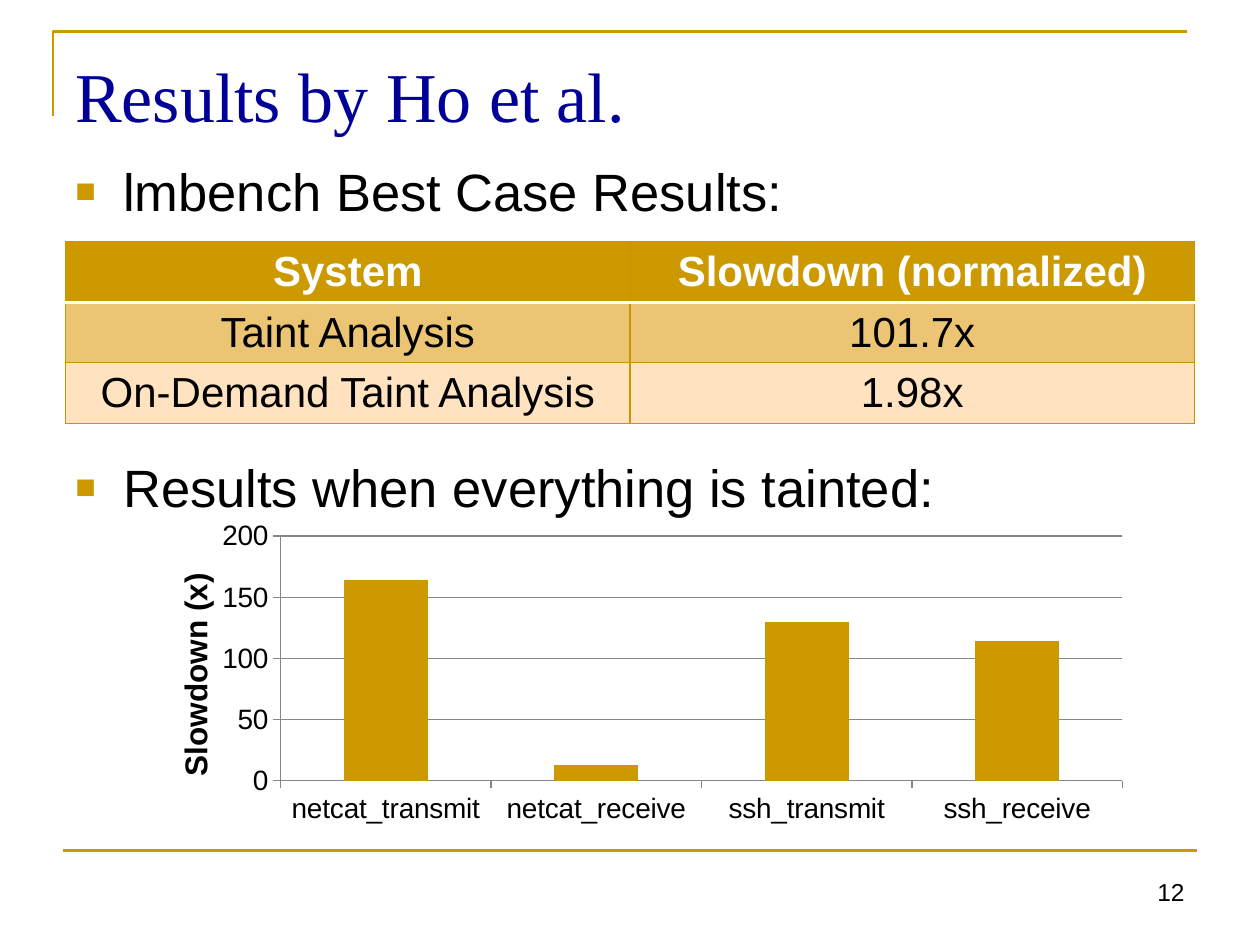
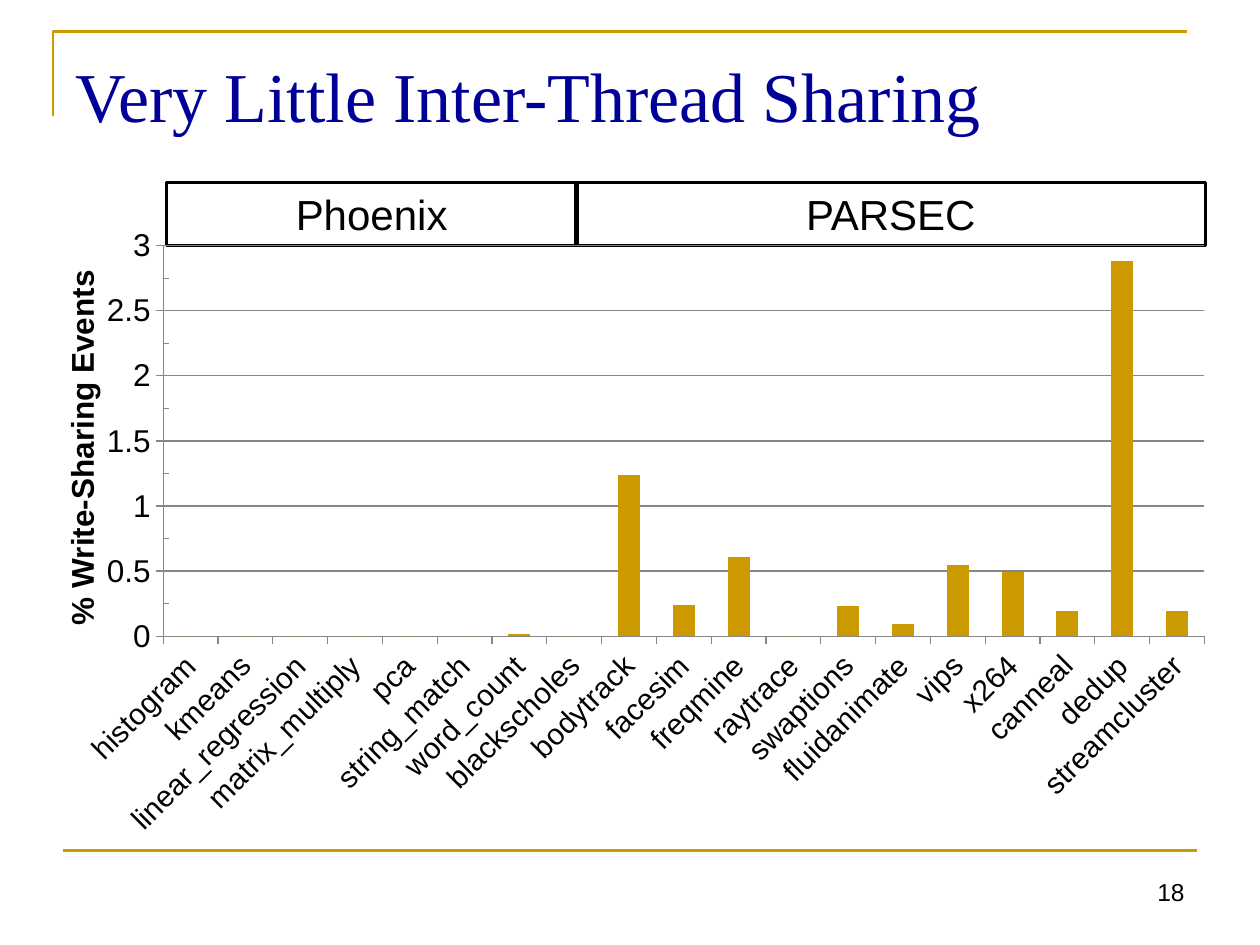
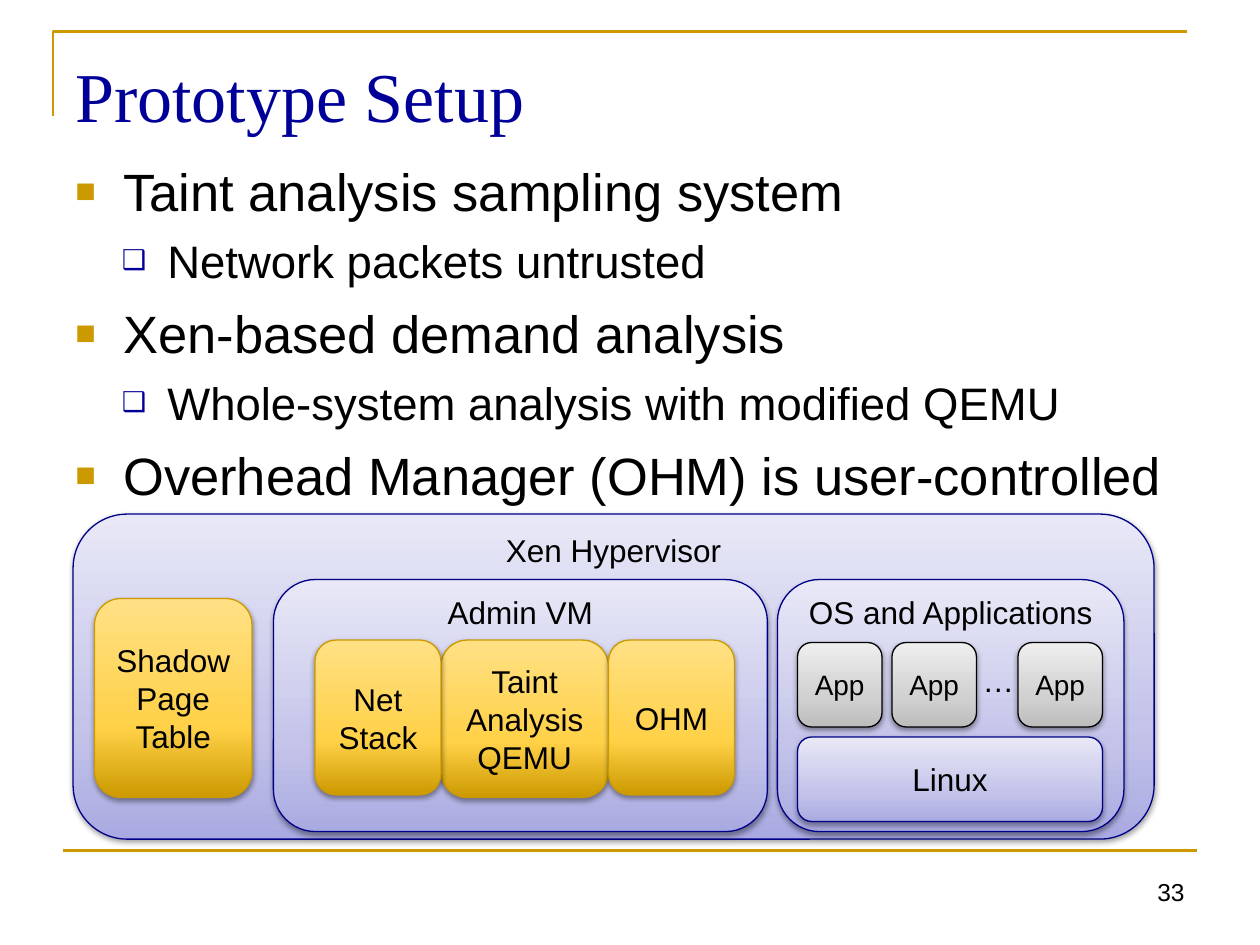
import lxml.etree
import pptx
import pptx.chart.data
import pptx.dml.color
import pptx.enum.chart
import pptx.enum.shapes
import pptx.enum.text
import pptx.oxml.ns
import pptx.util

Inches = pptx.util.Inches
Pt = pptx.util.Pt
qn = pptx.oxml.ns.qn
SHAPE = pptx.enum.shapes.MSO_SHAPE
ALIGN = pptx.enum.text.PP_ALIGN
ANCHOR = pptx.enum.text.MSO_ANCHOR
TICK = pptx.enum.chart.XL_TICK_MARK

COLORS = {
    "gold": "CC9900", "edge": "C89600", "title": "000099", "navy": "000087",
    "black": "000000", "white": "FFFFFF", "grid": "868686",
    "tan": "EBC573", "cream": "FFE2BF",
}
LOOKS = {
    "blue": ("navy", [(0, "AAAAE2"), (35, "C4C4EA"), (100, "E8E8F7")]),
    "gold": ("gold", [(0, "CC9900"), (35, "FFD147"), (100, "FFE085")]),
    "gray": ("black", [(0, "BDBDBD"), (35, "D1D1D1"), (100, "EEEEEE")]),
}
LEVELS = [
    {"size": 30, "left": 0.38, "hang": 0.38, "mark": "■", "tint": "gold", "scale": 65, "gap": 7.5},
    {"size": 26, "left": 0.73, "hang": 0.36, "mark": "❑", "tint": "title", "scale": 60, "gap": 6.5},
]

TABLE = [
    ("System", "Slowdown (normalized)"),
    ("Taint Analysis", "101.7x"),
    ("On-Demand Taint Analysis", "1.98x"),
]
ROW_FILLS = ["gold", "tan", "cream"]

TAINTED = {
    "at": (1.02, 4.08, 8.05, 2.49),
    "plot": (0.15, 0.07, 0.83, 0.78),
    "label": ("Slowdown (x)", 0.04, 0.17),
    "sizes": (16, 16),
    "top": 200, "step": 50,
    "data": {"netcat_transmit": 164, "netcat_receive": 13, "ssh_transmit": 130, "ssh_receive": 114},
}
SHARING = {
    "at": (0.25, 1.75, 9.5, 5),
    "plot": (0.11, 0.04, 0.87, 0.62),
    "label": ("% Write-Sharing Events", 0.02, 0.07),
    "sizes": (17, 18),
    "top": 3, "step": 0.5, "minor": 0.25, "turn": -45,
    "data": {
        "histogram": 0, "kmeans": 0, "linear_regression": 0, "matrix_multiply": 0,
        "pca": 0, "string_match": 0, "word_count": 0.02, "blackscholes": 0,
        "bodytrack": 1.24, "facesim": 0.24, "freqmine": 0.61, "raytrace": 0,
        "swaptions": 0.23, "fluidanimate": 0.09, "vips": 0.55, "x264": 0.49,
        "canneal": 0.19, "dedup": 2.88, "streamcluster": 0.19,
    },
}
SUITES = [("Phoenix", 1.32, 3.26), ("PARSEC", 4.57, 5)]

SETUP = [
    (0, "Taint analysis sampling system"),
    (1, "Network packets untrusted"),
    (0, "Xen-based demand analysis"),
    (1, "Whole-system analysis with modified QEMU"),
    (0, "Overhead Manager (OHM) is user-controlled"),
]
FRAMES = [
    ("Xen Hypervisor", (0.58, 4.08, 8.58, 2.58)),
    ("OS and Applications", (6.17, 4.6, 2.75, 2)),
    ("Admin VM", (2.17, 4.6, 3.92, 2)),
]
APPS = [6.33, 7.08, 8.08]
PARTS = [
    ("Linux", "blue", (6.33, 5.85, 2.42, 0.67)),
    ("Shadow\vPage Table", "gold", (0.75, 4.75, 1.25, 1.58)),
    ("Taint Analysis QEMU", "gold", (3.5, 5.08, 1.33, 1.25)),
    ("Net Stack", "gold", (2.5, 5.08, 1, 1.23)),
    ("OHM", "gold", (4.83, 5.08, 1, 1.23)),
]


def rgb(name):
    return pptx.dml.color.RGBColor.from_string(COLORS[name])


def place(box):
    return [Inches(n) for n in box]


def sub(node, tag, **attrs):
    return lxml.etree.SubElement(node, qn(tag), {k: str(v) for k, v in attrs.items()})


def paint(node, name):
    sub(sub(node, "a:solidFill"), "a:srgbClr", val=COLORS[name])


def write(frame, text, size=18, color="black", font="Arial", bold=False, align=ALIGN.LEFT,
          anchor=ANCHOR.TOP, wrap=True, side=0.1, edge=0.05, level=None, gap=0):
    frame.word_wrap = wrap
    frame.vertical_anchor = anchor
    frame.margin_left = frame.margin_right = Inches(side)
    frame.margin_top = frame.margin_bottom = Inches(edge)
    para = frame.add_paragraph() if frame.text else frame.paragraphs[0]
    para.text = text
    para.alignment = align
    if gap:
        para.space_before = Pt(gap)
    if level:
        props = para._p.get_or_add_pPr()
        props.set("marL", str(Inches(level["left"])))
        props.set("indent", str(-Inches(level["hang"])))
        sub(sub(props, "a:buClr"), "a:srgbClr", val=COLORS[level["tint"]])
        sub(props, "a:buSzPct", val=level["scale"] * 1000)
        sub(props, "a:buFont", typeface="Arial")
        sub(props, "a:buChar", char=level["mark"])
    for run in para.runs:
        run.font.size = Pt(size)
        run.font.name = font
        run.font.bold = bold
        run.font.color.rgb = rgb(color)


def label(slide, box, text, **style):
    write(slide.shapes.add_textbox(*place(box)).text_frame, text, **style)


def stroke(line, color, width):
    line.color.rgb = rgb(color)
    line.width = Pt(width)


def start(deck, title, number):
    slide = deck.slides.add_slide(deck.slide_layouts[6])
    pen = slide.shapes.build_freeform(Inches(0.42), Inches(0.92), 1)
    pen.add_line_segments([place((0.42, 0.25)), place((9.42, 0.25))], close=False)
    corner = pen.convert_to_shape()
    corner.fill.background()
    corner.shadow.inherit = False
    stroke(corner.line, "gold", 1.5)
    rule = slide.shapes.add_connector(
        pptx.enum.shapes.MSO_CONNECTOR.STRAIGHT, *place((0.5, 6.75, 9.5, 6.75)))
    stroke(rule.line, "gold", 1.5)
    sub(rule._element.spPr, "a:effectLst")
    label(slide, (0.5, 0.37, 9, 0.7), title, size=40, color="title", font="Times New Roman")
    label(slide, (7.17, 6.91, 2.33, 0.51), str(number), size=14, align=ALIGN.RIGHT)
    return slide


def outline(slide, items):
    frame = slide.shapes.add_textbox(*place((0.5, 1.21, 9, 5.5))).text_frame
    for i, (depth, text, *gap) in enumerate(items):
        level = LEVELS[depth]
        space = gap[0] if gap else level["gap"]
        write(frame, text, size=level["size"], level=level, gap=space if i else 0)


def border(cell, tag, color, width):
    line = sub(cell._tc.get_or_add_tcPr(), tag, w=Pt(width))
    paint(line, color)


def grid(slide):
    rows, cols = len(TABLE), len(TABLE[0])
    table = slide.shapes.add_table(rows, cols, *place((0.52, 1.92, 8.96, 0.47 * rows))).table
    for r, texts in enumerate(TABLE):
        table.rows[r].height = Inches(0.47)
        for c, text in enumerate(texts):
            cell = table.cell(r, c)
            head = r == 0
            write(cell.text_frame, text, size=24, bold=head, align=ALIGN.CENTER,
                  color="white" if head else "black")
            cell.margin_top = cell.margin_bottom = Inches(0.04)
            cell.vertical_anchor = ANCHOR.MIDDLE
            for tag in ("a:lnL", "a:lnR"):
                border(cell, tag, "edge", 0.75)
            border(cell, "a:lnT", *(("white", 2) if r == 1 else ("edge", 0.75)))
            border(cell, "a:lnB", *(("white", 2) if head else ("edge", 0.75)))
            cell.fill.solid()
            cell.fill.fore_color.rgb = rgb(ROW_FILLS[r])


def arrange(node, **spots):
    found = node.xpath("c:layout")
    if found:
        layout = found[0]
        layout.clear()
    else:
        layout = lxml.etree.Element(qn("c:layout"))
        node.insert(len(node.xpath("c:tx")), layout)
    manual = sub(layout, "c:manualLayout")
    if "w" in spots:
        sub(manual, "c:layoutTarget", val="inner")
    for key in ("x", "y"):
        sub(manual, f"c:{key}Mode", val="edge")
    for key, value in spots.items():
        sub(manual, f"c:{key}", val=value)


def turn(node, angle):
    body = node.xpath(".//a:bodyPr")[0]
    body.set("rot", str(angle * 60000))
    body.set("vert", "horz")


def bars(slide, info):
    data = pptx.chart.data.CategoryChartData()
    data.categories = list(info["data"])
    data.add_series("Series 1", list(info["data"].values()))
    kind = pptx.enum.chart.XL_CHART_TYPE.COLUMN_CLUSTERED
    chart = slide.shapes.add_chart(kind, *place(info["at"]), data).chart
    chart.has_legend = chart.has_title = False
    chart.font.name = "Arial"
    chart.font.size = Pt(10)
    chart.font.color.rgb = rgb("black")
    plot = chart.plots[0]
    plot.gap_width = 150
    plot.vary_by_categories = False
    fill = plot.series[0].format.fill
    fill.solid()
    fill.fore_color.rgb = rgb("gold")

    cats, vals = chart.category_axis, chart.value_axis
    for axis, size in zip((cats, vals), info["sizes"]):
        axis.major_tick_mark = TICK.OUTSIDE
        axis.minor_tick_mark = TICK.NONE
        axis.tick_labels.font.size = Pt(size)
        stroke(axis.format.line, "grid", 0.75)
    vals.minimum_scale, vals.maximum_scale = 0, info["top"]
    vals.major_unit = info["step"]
    vals.has_major_gridlines = True
    stroke(vals.major_gridlines.format.line, "grid", 0.75)
    if "minor" in info:
        vals.minor_unit = info["minor"]
        vals.minor_tick_mark = TICK.INSIDE
    if "turn" in info:
        turn(cats._element.xpath("c:txPr")[0], info["turn"])
    text, x, y = info["label"]
    title = vals.axis_title
    run = title.text_frame.paragraphs[0].add_run()
    run.text = text
    run.font.size = Pt(18)
    run.font.bold = True
    run.font.name = "Arial"
    run.font.color.rgb = rgb("black")
    turn(title._element, -90)
    arrange(title._element, x=x, y=y)
    arrange(chart._chartSpace.xpath("c:chart/c:plotArea")[0], **dict(zip("xywh", info["plot"])))


def block(slide, text, look, box, **style):
    shape = slide.shapes.add_shape(SHAPE.ROUNDED_RECTANGLE, *place(box))
    edge, stops = LOOKS[look]
    shape.fill.gradient()
    shape.fill.gradient_angle = 90
    ramp = shape._element.xpath(".//a:gsLst")[0]
    ramp.clear()
    for spot, color in stops:
        sub(sub(ramp, "a:gs", pos=spot * 1000), "a:srgbClr", val=color)
    stroke(shape.line, edge, 0.75)
    shape.shadow.inherit = False
    cast = sub(shape._element.xpath(".//a:effectLst")[0], "a:outerShdw", blurRad=Pt(3.1),
               dist=Pt(1.6), dir=5400000, rotWithShape=0)
    sub(sub(cast, "a:srgbClr", val=COLORS["black"]), "a:alpha", val=38000)
    write(shape.text_frame, text, align=ALIGN.CENTER, **style)


def results(deck):
    slide = start(deck, "Results by Ho et al.", 12)
    outline(slide, [(0, "lmbench Best Case Results:"),
                    (0, "Results when everything is tainted:", 133.5)])
    grid(slide)
    bars(slide, TAINTED)


def sharing(deck):
    slide = start(deck, "Very Little Inter-Thread Sharing", 18)
    for name, left, width in SUITES:
        suite = slide.shapes.add_shape(SHAPE.RECTANGLE, *place((left, 1.45, width, 0.5)))
        suite.fill.background()
        suite.shadow.inherit = False
        stroke(suite.line, "black", 2)
        write(suite.text_frame, name, size=24, align=ALIGN.CENTER, anchor=ANCHOR.MIDDLE)
    bars(slide, SHARING)


def setup(deck):
    slide = start(deck, "Prototype Setup", 33)
    outline(slide, SETUP)
    for text, box in FRAMES:
        block(slide, text, "blue", box, edge=0.01)
    for left in APPS:
        block(slide, "App", "gray", (left, 5.1, 0.67, 0.67), size=16, side=0,
              anchor=ANCHOR.MIDDLE)
    label(slide, (7.7, 5.2, 0.45, 0.4), "…", wrap=False)
    for text, look, box in PARTS:
        block(slide, text, look, box, side=0.05, anchor=ANCHOR.MIDDLE)


def main():
    deck = pptx.Presentation()
    deck.slide_width, deck.slide_height = Inches(10), Inches(7.5)
    results(deck)
    sharing(deck)
    setup(deck)
    deck.save("out.pptx")


if __name__ == "__main__":
    main()
